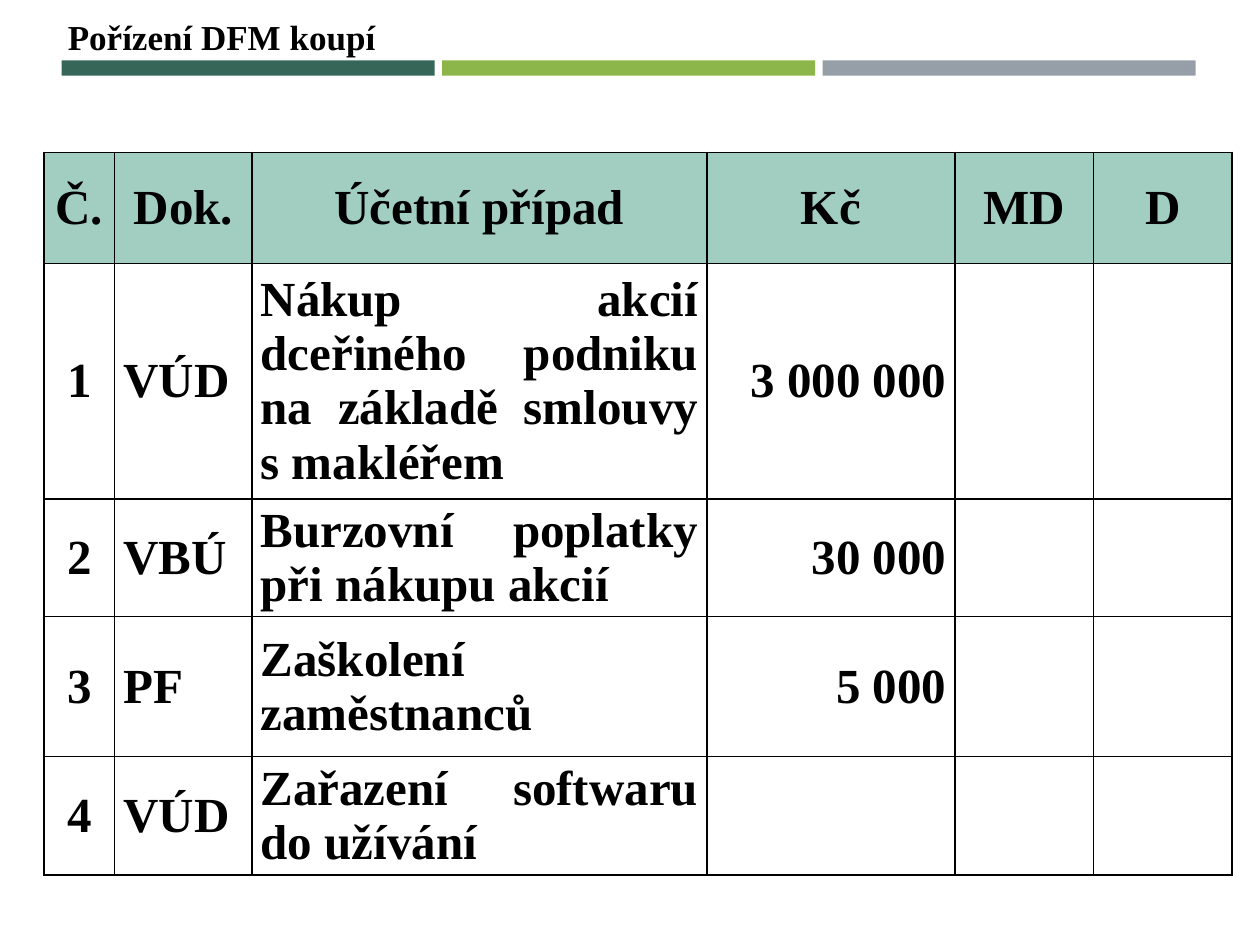
import lxml.etree
import pptx
import pptx.dml.color
import pptx.enum.shapes
import pptx.enum.text
import pptx.oxml.ns
import pptx.util

Inches = pptx.util.Inches
Align = pptx.enum.text.PP_ALIGN

THEME = {
    "font": "Times New Roman",
    "text": "000000",
    "border": "000000",
    "header": "A2CEC1",
    "bars": ["366658", "8CB64A", "969FA7"],
    "title_size": 20,
    "table_size": 28,
    "border_width": 1,
}

TITLE = "Pořízení DFM koupí"
HEADERS = ["Č.", "Dok.", "Účetní případ", "Kč", "MD", "D"]
ENTRIES = [
    ["1", "VÚD", "Nákup akcií dceřiného podniku na základě smlouvy s makléřem", "3 000 000", "", ""],
    ["2", "VBÚ", "Burzovní poplatky při nákupu akcií", "30 000", "", ""],
    ["3", "PF", "Zaškolení zaměstnanců", "5 000", "", ""],
    ["4", "VÚD", "Zařazení softwaru do užívání", "", "", ""],
]
COLUMN_WIDTHS = [0.56, 1.09, 3.61, 1.97, 1.1, 1.1]
ROW_HEIGHTS = [0.88, 1.87, 0.93, 1.11, 0.94]
COLUMN_ALIGNS = [Align.CENTER, Align.LEFT, Align.JUSTIFY, Align.RIGHT, Align.CENTER, Align.CENTER]


def color(name):
    return pptx.dml.color.RGBColor.from_string(name)


def style_text(para, size):
    fonts = [run.font for run in para.runs] or [para.font]
    for font in fonts:
        font.name = THEME["font"]
        font.size = pptx.util.Pt(size)
        font.bold = True
        font.color.rgb = color(THEME["text"])


def add_borders(cell):
    """Draw all four cell edges; they must precede the fill in tcPr."""
    properties = cell._tc.get_or_add_tcPr()
    qn = pptx.oxml.ns.qn
    for index, edge in enumerate(["a:lnL", "a:lnR", "a:lnT", "a:lnB"]):
        line = lxml.etree.Element(qn(edge), w=str(pptx.util.Pt(THEME["border_width"])))
        fill = lxml.etree.SubElement(line, qn("a:solidFill"))
        lxml.etree.SubElement(fill, qn("a:srgbClr"), val=THEME["border"])
        properties.insert(index, line)


def add_bars(slide):
    left, width, gap = 0.49, 2.96, 0.06
    for index, fill in enumerate(THEME["bars"]):
        bar = slide.shapes.add_shape(
            pptx.enum.shapes.MSO_SHAPE.RECTANGLE,
            Inches(left + index * (width + gap)), Inches(0.48), Inches(width), Inches(0.12))
        bar.shadow.inherit = False
        bar.fill.solid()
        bar.fill.fore_color.rgb = color(fill)
        bar.line.fill.background()


def add_title(slide):
    box = slide.shapes.add_textbox(Inches(0.44), Inches(0.07), Inches(2.66), Inches(0.44))
    frame = box.text_frame
    frame.text = TITLE
    frame.word_wrap = False
    frame.auto_size = pptx.enum.text.MSO_AUTO_SIZE.SHAPE_TO_FIT_TEXT
    style_text(frame.paragraphs[0], THEME["title_size"])


def fill_cell(cell, text, align, is_header):
    cell.margin_left = cell.margin_right = Inches(0.07)
    cell.margin_top = cell.margin_bottom = 0
    cell.vertical_anchor = pptx.enum.text.MSO_ANCHOR.MIDDLE
    if is_header:
        cell.fill.solid()
        cell.fill.fore_color.rgb = color(THEME["header"])
    else:
        cell.fill.background()
    add_borders(cell)
    para = cell.text_frame.paragraphs[0]
    para.text = text
    para.alignment = align
    style_text(para, THEME["table_size"])


def add_entries_table(slide):
    rows = [HEADERS] + ENTRIES
    table = slide.shapes.add_table(
        len(rows), len(HEADERS), Inches(0.35), Inches(1.21),
        Inches(sum(COLUMN_WIDTHS)), Inches(sum(ROW_HEIGHTS))).table
    table.horz_banding = False
    for column, width in zip(table.columns, COLUMN_WIDTHS):
        column.width = Inches(width)
    for row, height in zip(table.rows, ROW_HEIGHTS):
        row.height = Inches(height)
    for row_index, texts in enumerate(rows):
        is_header = row_index == 0
        for column_index, text in enumerate(texts):
            align = Align.CENTER if is_header else COLUMN_ALIGNS[column_index]
            fill_cell(table.cell(row_index, column_index), text, align, is_header)


def main():
    deck = pptx.Presentation()
    deck.slide_width, deck.slide_height = Inches(10), Inches(7.5)
    slide = deck.slides.add_slide(deck.slide_layouts[6])
    add_bars(slide)
    add_title(slide)
    add_entries_table(slide)
    deck.save("out.pptx")


if __name__ == "__main__":
    main()
